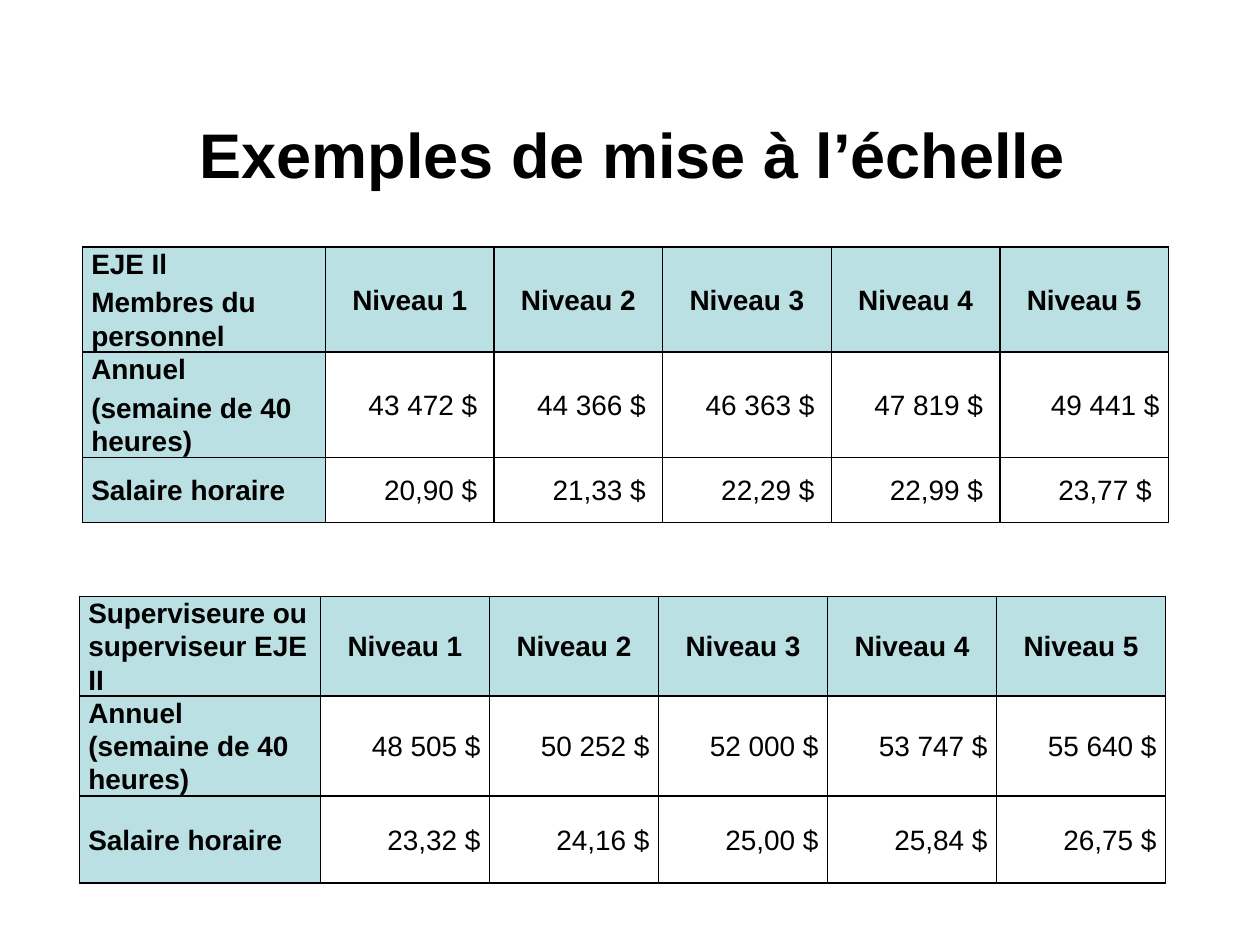
from dataclasses import dataclass

import pptx
import pptx.dml.color
import pptx.enum.text
import pptx.oxml
import pptx.oxml.ns
import pptx.util

Cm = pptx.util.Cm
Pt = pptx.util.Pt
ALIGN = pptx.enum.text.PP_ALIGN
MIDDLE = pptx.enum.text.MSO_ANCHOR.MIDDLE


@dataclass(frozen=True)
class Theme:
    font: str = "Arial"
    text: str = "000000"
    label_fill: str = "BBE0E3"
    value_fill: str = "FFFFFF"
    border: str = "000000"
    title_size: int = 36
    cell_size: int = 16
    line_spacing: float = 1.07


THEME = Theme()
LEVELS = [f"Niveau {level}" for level in range(1, 6)]
ANNUAL = "Annuel\n(semaine de 40 heures)"
HOURLY = "Salaire horaire"

STAFF_ROWS = [
    ["EJE Il\nMembres du personnel", *LEVELS],
    [ANNUAL, "43 472 $", "44 366 $", "46 363 $", "47 819 $", "49 441 $"],
    [HOURLY, "20,90 $", "21,33 $", "22,29 $", "22,99 $", "23,77 $"],
]
SUPERVISOR_ROWS = [
    ["Superviseure ou superviseur EJE II", *LEVELS],
    [ANNUAL, "48 505 $", "50 252 $", "52 000 $", "53 747 $", "55 640 $"],
    [HOURLY, "23,32 $", "24,16 $", "25,00 $", "25,84 $", "26,75 $"],
]


def rgb(value):
    return pptx.dml.color.RGBColor.from_string(value)


def style_font(font, size, bold):
    font.name = THEME.font
    font.size = Pt(size)
    font.bold = bold
    font.color.rgb = rgb(THEME.text)


def add_borders(cell):
    properties = cell._tc.get_or_add_tcPr()
    namespace = pptx.oxml.ns.nsdecls("a")
    for side in ("lnL", "lnR", "lnT", "lnB"):
        properties.append(pptx.oxml.parse_xml(
            f'<a:{side} {namespace} w="{Pt(1)}"><a:solidFill>'
            f'<a:srgbClr val="{THEME.border}"/></a:solidFill></a:{side}>'))


def format_cell(cell, text, is_label, align, inset, right_inset, gap):
    add_borders(cell)
    cell.fill.solid()
    cell.fill.fore_color.rgb = rgb(THEME.label_fill if is_label else THEME.value_fill)
    cell.vertical_anchor = MIDDLE
    cell.margin_top = cell.margin_bottom = 0
    cell.margin_left, cell.margin_right = inset, right_inset
    cell.text_frame.text = text
    for index, para in enumerate(cell.text_frame.paragraphs):
        para.alignment = align
        para.line_spacing = THEME.line_spacing
        para.space_before = Pt(gap if index else 0)
        for span in para.runs:
            style_font(span.font, THEME.cell_size, is_label)


def add_title(page, left, top, width, height):
    box = page.shapes.title
    box.left, box.top, box.width, box.height = left, top, width, height
    frame = box.text_frame
    frame.text = "Exemples de mise à l’échelle"
    frame.vertical_anchor = MIDDLE
    para = frame.paragraphs[0]
    para.alignment = ALIGN.CENTER
    style_font(para.runs[0].font, THEME.title_size, True)


def add_pay_table(page, left, top, width, label_width, row_heights, rows,
                  value_inset, gap):
    """Pay scale: headings and labels are tinted, amounts are right-aligned."""
    table = page.shapes.add_table(len(rows), len(rows[0]), left, top, width,
                                  sum(row_heights)).table
    level_width = (width - label_width) // len(LEVELS)
    for index, column in enumerate(table.columns):
        column.width = level_width if index else label_width
    inset = Cm(0.18)
    for r, (height, texts) in enumerate(zip(row_heights, rows)):
        table.rows[r].height = height
        for c, text in enumerate(texts):
            is_value = r > 0 and c > 0
            align = ALIGN.RIGHT if is_value else ALIGN.CENTER if c else ALIGN.LEFT
            format_cell(table.cell(r, c), text, not is_value, align, inset,
                        value_inset if is_value else inset, gap)
    return table


def main():
    deck = pptx.Presentation()
    deck.slide_width, deck.slide_height = Cm(25.4), Cm(19.05)
    page = deck.slides.add_slide(deck.slide_layouts[5])
    add_title(page, Cm(1.6), Cm(1.9), Cm(22.3), Cm(2.4))
    add_pay_table(page, Cm(1.6), Cm(12.02), Cm(21.9), Cm(4.86),
                  [Cm(2.01), Cm(2.01), Cm(1.76)], SUPERVISOR_ROWS, Cm(0.18), 0)
    staff = add_pay_table(page, Cm(1.66), Cm(4.98), Cm(21.9), Cm(4.9),
                          [Cm(2.12), Cm(2.12), Cm(1.31)], STAFF_ROWS, Cm(0.34), 3)
    staff.cell(1, 5).margin_right = Cm(0.18)
    deck.save("out.pptx")


if __name__ == "__main__":
    main()
